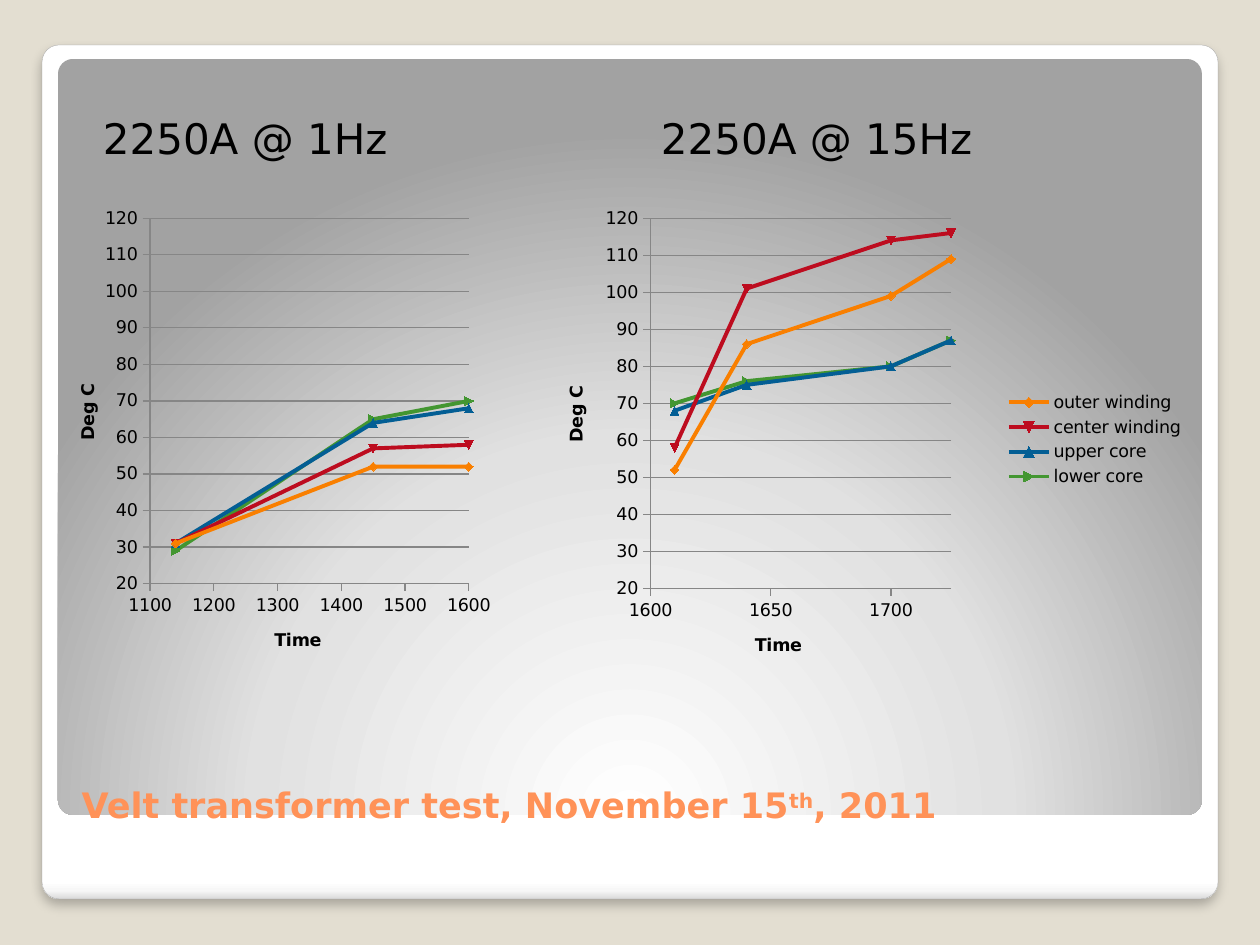
from lxml.etree import SubElement
from pptx import Presentation
from pptx.chart.data import XyChartData
from pptx.dml.color import RGBColor
from pptx.enum.chart import XL_CHART_TYPE, XL_LEGEND_POSITION, XL_TICK_MARK
from pptx.enum.shapes import MSO_SHAPE
from pptx.enum.text import MSO_ANCHOR, PP_ALIGN
from pptx.oxml import parse_xml
from pptx.oxml.ns import nsdecls, qn
from pptx.util import Emu, Pt

COLORS = {
    "page": "E3DED1", "edge": "A4A4A4", "title": "FF9258", "text": "000000",
    "grid": "868686", "outer winding": "F07F09", "center winding": "9F2936",
    "upper core": "1B587C", "lower core": "4E8542",
}
FONT = "DejaVu Sans"
SCALE = 914400 / 126
CARD_STOPS = [(0, "FFFFFF"), (98, "FFFFFF"), (99, "F7F7F7"), (100, "DADADA")]
GLOW_STOPS = [(0, "FFFFFF"), (55, "E1E1E1"), (100, "A2A2A2")]
DOWNWARD = '<a:lin ang="5400000" scaled="0"/>'
FROM_BELOW = ('<a:path path="circle"><a:fillToRect l="50000" t="175000" '
              'r="50000" b="-75000"/></a:path>')
SOFT_SHADOW = ('<a:outerShdw blurRad="76200" dist="50800" dir="5400000" rotWithShape="0">'
               '<a:srgbClr val="000000"><a:alpha val="25000"/></a:srgbClr></a:outerShdw>')


def px(value):
    return Emu(round(value * SCALE))


def color(name):
    return RGBColor.from_string(COLORS[name])


class SlideBuilder:
    def __init__(self, deck):
        self.page = deck.slides.add_slide(deck.slide_layouts[5])
        background = self.page.background.fill
        background.solid()
        background.fore_color.rgb = color("page")

    def panel(self, bounds, stops, direction, edge=None, shadow=None):
        box = self.page.shapes.add_shape(MSO_SHAPE.ROUNDED_RECTANGLE, *map(px, bounds))
        box.adjustments[0] = 0.02
        box.shadow.inherit = False
        if edge:
            box.line.color.rgb = color(edge)
            box.line.width = Pt(0.16)
        else:
            box.line.fill.background()
        marks = "".join(f'<a:gs pos="{at * 1000}"><a:srgbClr val="{tint}"/></a:gs>'
                        for at, tint in stops)
        gradient = parse_xml(f'<a:gradFill {nsdecls("a")} rotWithShape="1">'
                             f'<a:gsLst>{marks}</a:gsLst>{direction}</a:gradFill>')
        properties = box._element.spPr
        properties.find(qn("a:prstGeom")).addnext(gradient)
        if shadow:
            effects = parse_xml(f'<a:effectLst {nsdecls("a")}>{shadow}</a:effectLst>')
            properties.replace(properties.find(qn("a:effectLst")), effects)

    def span(self, para, text, size, tint, bold=False, baseline=0):
        span = para.add_run()
        span.text = text
        span.font.name = FONT
        span.font.size = Pt(size)
        span.font.bold = bold
        span.font.color.rgb = color(tint)
        if baseline:
            span.font._element.set("baseline", str(baseline * 1000))

    def title(self, bounds, parts):
        box = self.page.shapes.title
        box.left, box.top, box.width, box.height = map(px, bounds)
        self.page.shapes._spTree.append(box._element)
        frame = box.text_frame
        frame.vertical_anchor = MSO_ANCHOR.BOTTOM
        para = frame.paragraphs[0]
        para.alignment = PP_ALIGN.LEFT
        for text, baseline in parts:
            self.span(para, text, 20, "title", True, baseline)

    def heading(self, bounds, text):
        box = self.page.shapes.add_textbox(*map(px, bounds))
        frame = box.text_frame
        frame.word_wrap = True
        frame.vertical_anchor = MSO_ANCHOR.MIDDLE
        frame.margin_left, frame.margin_top = px(20), px(13)
        frame.margin_right, frame.margin_bottom = px(13), px(6)
        para = frame.paragraphs[0]
        para.space_before = Pt(2.5)
        self.span(para, text, 24, "text")

    def axis(self, axis, caption, limits, step, grid):
        axis.minimum_scale, axis.maximum_scale = limits
        axis.major_unit = step
        axis.major_tick_mark = XL_TICK_MARK.OUTSIDE
        axis.minor_tick_mark = XL_TICK_MARK.NONE
        axis.tick_labels.number_format = "General"
        axis.tick_labels.number_format_is_linked = False
        axis.has_major_gridlines = grid
        lines = [axis.format.line]
        if grid:
            lines.append(axis.major_gridlines.format.line)
        for line in lines:
            line.color.rgb = color("grid")
            line.width = Pt(0.75)
        para = axis.axis_title.text_frame.paragraphs[0]
        self.span(para, caption, 10, "text", True)

    def chart(self, bounds, times, readings, limits, step, plot, legend=False, names=None):
        data = XyChartData()
        for number, (key, values) in enumerate(readings.items()):
            series = data.add_series(names[number] if names else key)
            for time, value in zip(times, values):
                series.add_data_point(time, value)
        chart = self.page.shapes.add_chart(
            XL_CHART_TYPE.XY_SCATTER_LINES, *map(px, bounds), data).chart
        chart.has_title = False
        chart.font.name = FONT
        chart.font.size = Pt(10)
        chart.font.color.rgb = color("text")
        chart.has_legend = legend
        if legend:
            chart.legend.position = XL_LEGEND_POSITION.RIGHT
            chart.legend.include_in_layout = False
        chart.plots[0].vary_by_categories = False
        for key, series in zip(readings, chart.plots[0].series):
            series.smooth = False
            line = series.format.line
            line.width = Pt(2.25)
            marker = series.marker.format
            marker.fill.solid()
            for paint in (line.color, marker.fill.fore_color, marker.line.color):
                paint.rgb = color(key)
            for tint in series._element.iter(qn("a:srgbClr")):
                SubElement(tint, qn("a:satMod")).set("val", "150000")
        self.axis(chart.category_axis, "Time", limits, step, False)
        self.axis(chart.value_axis, "Deg C", (20, 120), 10, True)
        self.plot_area(chart, plot)

    def plot_area(self, chart, plot):
        area = chart._chartSpace.chart.plotArea
        for old in area.findall(qn("c:layout")):
            area.remove(old)
        layout = SubElement(area, qn("c:layout"))
        area.insert(0, layout)
        manual = SubElement(layout, qn("c:manualLayout"))
        settings = [("layoutTarget", "inner"), ("xMode", "edge"), ("yMode", "edge")]
        for name, value in settings + list(zip("xywh", plot)):
            SubElement(manual, qn(f"c:{name}")).set("val", str(value))


def main():
    deck = Presentation()
    deck.slide_width, deck.slide_height = px(1260), px(945)
    slide = SlideBuilder(deck)
    slide.panel((42, 45, 1176, 854), CARD_STOPS, DOWNWARD, "edge", SOFT_SHADOW)
    slide.panel((58, 59, 1144, 756), GLOW_STOPS, FROM_BELOW)
    slide.title((69, 687, 1128, 145),
                [("Velt transformer test, November 15", 0), ("th", 30), (", 2011", 0)])
    for left, text in ((83, "2250A @ 1Hz"), (641, "2250A @ 15Hz")):
        slide.heading((left, 79, 542, 110), text)
    slow = {
        "outer winding": (31, 31, 52, 52),
        "center winding": (31, 31, 57, 58),
        "upper core": (31, 31, 64, 68),
        "lower core": (29, 29, 65, 70),
    }
    fast = {
        "outer winding": (52, 86, 99, 109),
        "center winding": (58, 101, 114, 116),
        "upper core": (68, 75, 80, 87),
        "lower core": (70, 76, 80, 87),
    }
    slide.chart((73, 199, 514, 481), (1140, 1140, 1450, 1600), slow, (1100, 1600), 100,
                (0.15, 0.04, 0.62, 0.76),
                names=[f"Series {number}" for number in range(1, 5)])
    slide.chart((514, 199, 683, 481), (1610, 1640, 1700, 1725), fast, (1600, 1725), 50,
                (0.2, 0.04, 0.44, 0.77), legend=True)
    deck.save("out.pptx")


if __name__ == "__main__":
    main()
